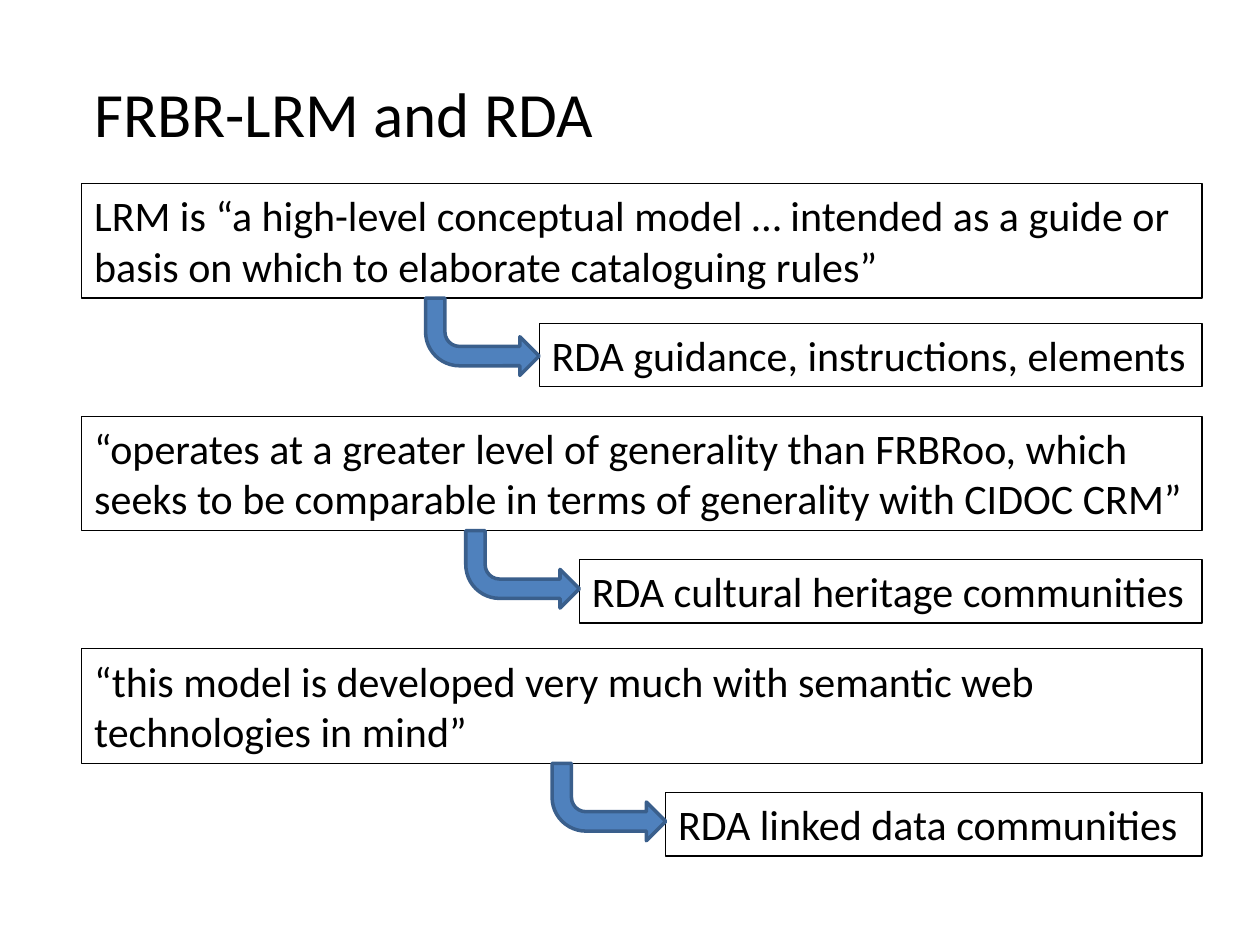
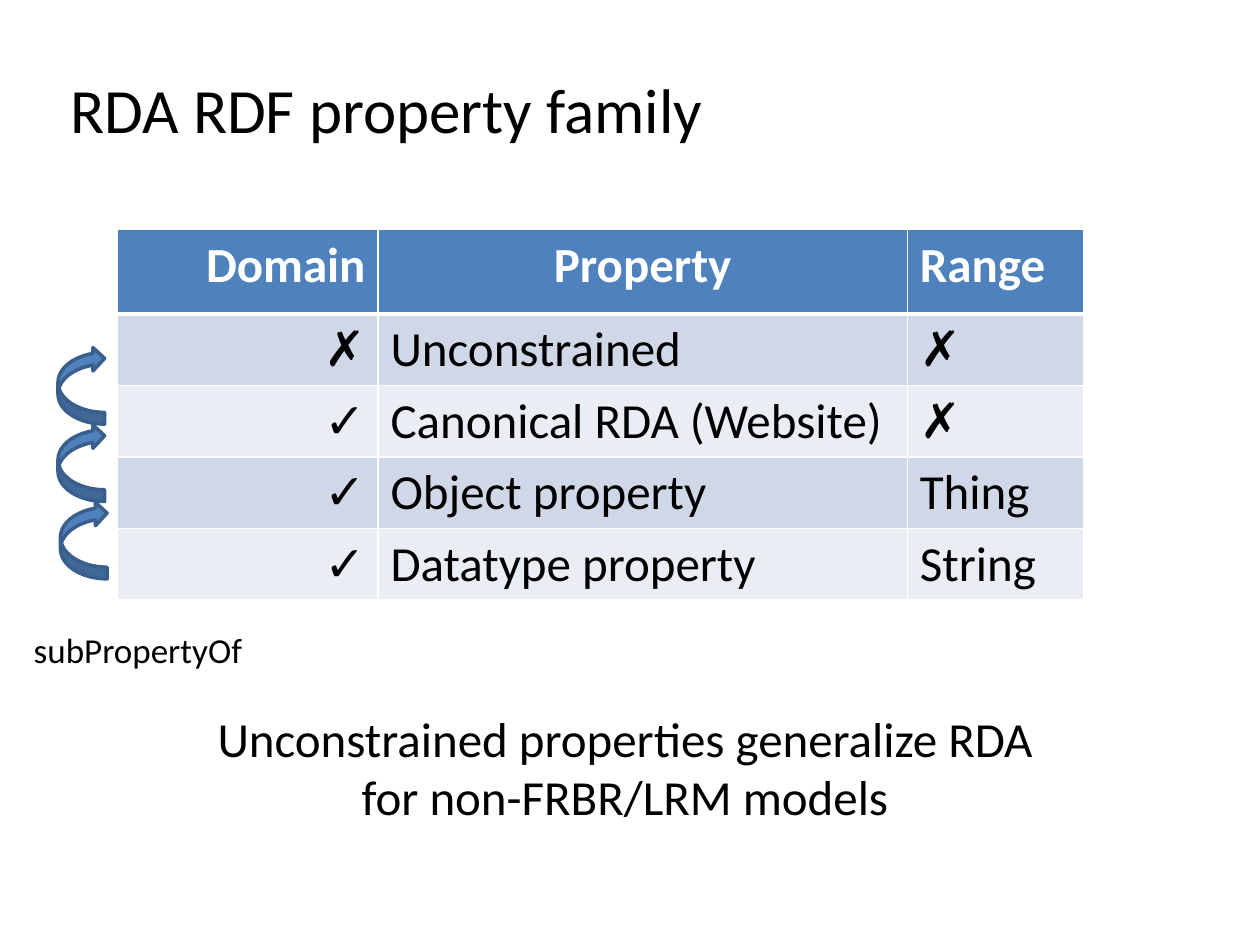
import pptx
import pptx.util
import pptx.dml.color
import pptx.enum.shapes
import pptx.enum.text
import pptx.oxml.ns
from lxml import etree

Cm, Pt = pptx.util.Cm, pptx.util.Pt
Align = pptx.enum.text.PP_ALIGN
Shape = pptx.enum.shapes.MSO_SHAPE
qn = pptx.oxml.ns.qn

# Shared style
FONT = "Calibri"
COLORS = {
    "text": "000000", "white": "FFFFFF", "blue": "4F81BD",
    "arrow_edge": "3A5F8C", "band_dark": "D0D8E8", "band_light": "E9EDF4",
}

# Slide 1 content: quote, its top, implication, its left and top (cm)
LRM_TITLE = ("FRBR-LRM and RDA", 1.65, 1.37, 10.67)
LRM_POINTS = [
    ("LRM is “a high-level conceptual model … intended as a guide or basis "
     "on which to elaborate cataloguing rules”", 3.7,
     "RDA guidance, instructions, elements", 10.87, 6.52),
    ("“operates at a greater level of generality than FRBRoo, which seeks to be "
     "comparable in terms of generality with CIDOC CRM”", 8.39,
     "RDA cultural heritage communities", 11.68, 11.28),
    ("“this model is developed very much with semantic web technologies in mind”",
     13.08, "RDA linked data communities", 13.42, 15.98),
]
QUOTE_LEFT, BOX_RIGHT = 1.65, 24.23
QUOTE_HEIGHT, IMPLICATION_HEIGHT = 2.31, 1.28
BENT_WIDTH, ARROW_LENGTH = 2.29, 1.56

# Slide 2 content
FAMILY_TITLE = ("RDA RDF property family", 1.17, 1.29, 13.36)
PROPERTY_ROWS = [
    ("Domain", "Property", "Range"),
    ("✗", "Unconstrained", "✗"),
    ("✓", "Canonical RDA (Website)", "✗"),
    ("✓", "Object property", "Thing"),
    ("✓", "Datatype property", "String"),
]
TABLE_LEFT, TABLE_TOP = 2.37, 4.63
COLUMN_WIDTHS = (5.25, 10.67, 3.55)
HEADER_HEIGHT, ROW_HEIGHT = 1.7, 1.44
COLUMN_ALIGNS = (Align.RIGHT, Align.LEFT, Align.LEFT)
HEADER_ALIGNS = (Align.RIGHT, Align.CENTER, Align.LEFT)
CURVED_LEFTS, CURVED_TOP, CURVED_WIDTH = (1.17, 1.17, 1.22), 6.99, 0.94
RELATION = ("subPropertyOf", 0.43, 12.55, 4.75, 1.12)
SUMMARY = "Unconstrained properties generalize RDA\nfor non-FRBR/LRM models"


def color(name):
    return pptx.dml.color.RGBColor.from_string(COLORS[name])


def format_text(frame, size, align=Align.LEFT, ink="text", bold=False):
    for para in frame.paragraphs:
        para.alignment = align
        for span in para.runs:
            span.font.name, span.font.size = FONT, Pt(size)
            span.font.bold = bold
            span.font.color.rgb = color(ink)


def add_text(page, text, left, top, width, height, size,
             align=Align.LEFT, wrap=False, framed=False):
    box = page.shapes.add_textbox(Cm(left), Cm(top), Cm(width), Cm(height))
    frame = box.text_frame
    frame.text = text
    frame.word_wrap = wrap
    frame.auto_size = pptx.enum.text.MSO_AUTO_SIZE.SHAPE_TO_FIT_TEXT
    format_text(frame, size, align)
    if framed:
        box.line.color.rgb = color("text")
        box.line.width = Pt(0.75)


def add_title(page, text, left, top, width):
    add_text(page, text, left, top, width, 1.8, 36)


def add_arrow(page, preset, left, top, width):
    """Block arrow mirrored top to bottom."""
    arrow = page.shapes.add_shape(preset, Cm(left), Cm(top), Cm(width), Cm(ARROW_LENGTH))
    arrow.shadow.inherit = False
    arrow.fill.solid()
    arrow.fill.fore_color.rgb = color("blue")
    arrow.line.color.rgb = color("arrow_edge")
    arrow.line.width = Pt(2)
    arrow._element.spPr.find(qn("a:xfrm")).set("flipV", "1")


def set_borders(cell, top, bottom):
    """White cell borders; top and bottom widths in points."""
    properties = cell._tc.get_or_add_tcPr()
    widths = {"a:lnL": 1, "a:lnR": 1, "a:lnT": top, "a:lnB": bottom}
    for position, (tag, width) in enumerate(widths.items()):
        line = etree.Element(qn(tag), w=str(Pt(width)))
        fill = etree.SubElement(line, qn("a:solidFill"))
        etree.SubElement(fill, qn("a:srgbClr"), val=COLORS["white"])
        properties.insert(position, line)


def build_lrm_page(page):
    add_title(page, *LRM_TITLE)
    for quote, quote_top, implication, left, top in LRM_POINTS:
        add_text(page, quote, QUOTE_LEFT, quote_top, BOX_RIGHT - QUOTE_LEFT,
                 QUOTE_HEIGHT, 24, wrap=True, framed=True)
        add_text(page, implication, left, top, BOX_RIGHT - left,
                 IMPLICATION_HEIGHT, 24, wrap=True, framed=True)
        add_arrow(page, Shape.BENT_ARROW, left - BENT_WIDTH,
                  quote_top + QUOTE_HEIGHT, BENT_WIDTH)


def add_property_table(page):
    heights = [HEADER_HEIGHT] + [ROW_HEIGHT] * (len(PROPERTY_ROWS) - 1)
    table = page.shapes.add_table(
        len(heights), len(COLUMN_WIDTHS), Cm(TABLE_LEFT), Cm(TABLE_TOP),
        Cm(sum(COLUMN_WIDTHS)), Cm(sum(heights))).table
    for column, width in zip(table.columns, COLUMN_WIDTHS):
        column.width = Cm(width)
    for r, (row, height) in enumerate(zip(PROPERTY_ROWS, heights)):
        table.rows[r].height = Cm(height)
        header = r == 0
        band = "blue" if header else ("band_light", "band_dark")[r % 2]
        for c, text in enumerate(row):
            cell = table.cell(r, c)
            cell.text_frame.text = text
            cell.fill.solid()
            cell.fill.fore_color.rgb = color(band)
            format_text(cell.text_frame, 28,
                        (HEADER_ALIGNS if header else COLUMN_ALIGNS)[c],
                        "white" if header else "text", header)
            set_borders(cell, 3 if r == 1 else 1, 3 if header else 1)


def build_family_page(page):
    add_title(page, *FAMILY_TITLE)
    add_property_table(page)
    # Chain of arrows, lowest first
    for step, left in reversed(list(enumerate(CURVED_LEFTS))):
        add_arrow(page, Shape.CURVED_RIGHT_ARROW, left,
                  CURVED_TOP + step * ARROW_LENGTH, CURVED_WIDTH)
    add_text(page, *RELATION, 20)
    add_text(page, SUMMARY, 4.04, 14.15, 17.12, 2.64, 28, Align.CENTER)


def main():
    deck = pptx.Presentation()
    deck.slide_width, deck.slide_height = Cm(25.4), Cm(19.05)
    for build in (build_lrm_page, build_family_page):
        build(deck.slides.add_slide(deck.slide_layouts[6]))
    deck.save("out.pptx")


if __name__ == "__main__":
    main()
